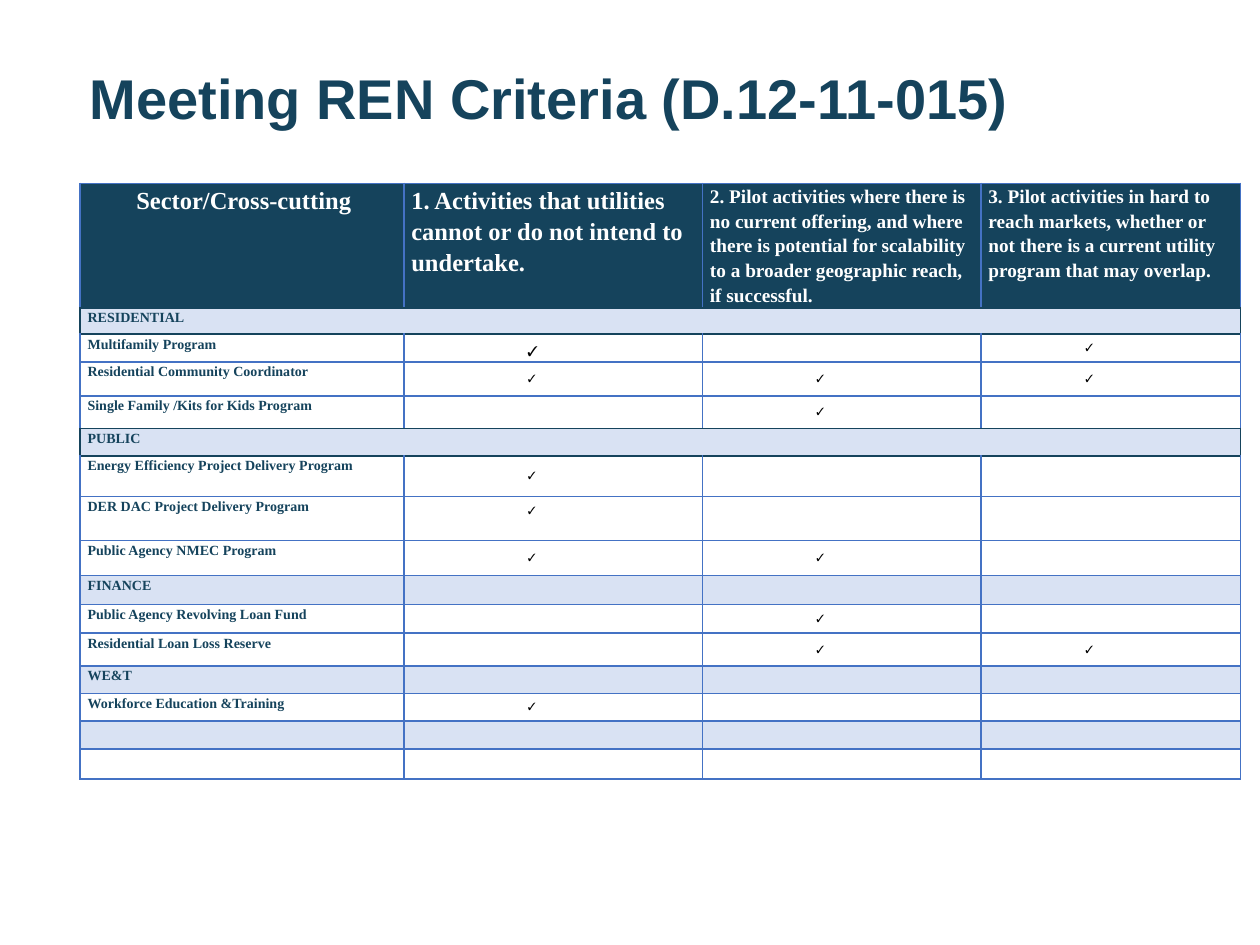
from dataclasses import dataclass

from lxml.etree import SubElement
from pptx import Presentation
from pptx.dml.color import RGBColor
from pptx.enum.text import MSO_ANCHOR, MSO_AUTO_SIZE, PP_ALIGN
from pptx.oxml.ns import qn
from pptx.util import Inches, Pt


@dataclass(frozen=True)
class Theme:
    navy: str = "15435C"
    blue: str = "4472C4"
    pale: str = "D9E2F3"
    white: str = "FFFFFF"
    black: str = "000000"
    title_font: str = "Arial"
    table_font: str = "Times New Roman"
    title_size: int = 32
    large_header: int = 14
    small_header: int = 11
    label_size: int = 8
    spacer_size: int = 9
    check_size: int = 6
    large_check: int = 8


THEME = Theme()
CHECK = "✓"
HARD_SPACE = " "
NO_STYLE = "{2D5ABB26-0587-4C30-8999-92F81FD0307C}"
COLUMN_WIDTHS = [2.57, 2.37, 2.21, 2.06]
HEADER_HEIGHT = 0.99
HEADERS = [
    ("Sector/Cross-cutting", THEME.large_header),
    ("1. Activities that utilities cannot or do not intend to undertake.", THEME.large_header),
    ("2. Pilot activities where there is no current offering, and where there is potential "
     "for scalability to a broader geographic reach, if successful.", THEME.small_header),
    ("3. Pilot activities in hard to reach markets, whether or not there is a current "
     "utility program that may overlap.", THEME.small_header),
]
# Row kind, height, label, criteria met
ROWS = [
    ("band", 0.21, "RESIDENTIAL", ()),
    ("program", 0.22, "Multifamily Program", (1, 3)),
    ("program", 0.27, "Residential Community Coordinator", (1, 2, 3)),
    ("program", 0.26, "Single Family /Kits for Kids Program", (2,)),
    ("band", 0.22, "PUBLIC", ()),
    ("program", 0.32, "Energy Efficiency Project Delivery Program", (1,)),
    ("program", 0.35, "DER DAC Project Delivery Program", (1,)),
    ("program", 0.28, "Public Agency NMEC Program", (1, 2)),
    ("section", 0.23, "FINANCE", ()),
    ("program", 0.23, "Public Agency Revolving Loan Fund", (2,)),
    ("program", 0.26, "Residential Loan Loss Reserve", (2, 3)),
    ("section", 0.22, "WE&T", ()),
    ("program", 0.22, "Workforce Education &Training", (1,)),
    ("section", 0.22, "", ()),
    ("program", 0.24, "", ()),
]
KINDS = ["header"] + [row[0] for row in ROWS]


def apply(target, formats):
    for name, value in formats.items():
        setattr(target, name, value)


def write(para, text, font, size, color, bold=True):
    span = para.add_run()
    span.text = text
    apply(span.font, {"name": font, "size": Pt(size), "bold": bold})
    span.font.color.rgb = RGBColor.from_string(color)


def edge_colors(row, column):
    """Navy around full-width bands, blue elsewhere; bands have no inner verticals."""
    kind = KINDS[row]
    above = KINDS[row - 1] if row else ""
    below = KINDS[row + 1] if row + 1 < len(KINDS) else ""
    band = kind == "band"
    last = len(COLUMN_WIDTHS) - 1
    side = THEME.navy if band else THEME.blue
    return {
        "lnL": None if band and column > 0 else side,
        "lnR": None if band and column < last else side,
        "lnT": THEME.navy if "band" in (kind, above) else THEME.blue,
        "lnB": THEME.navy if "band" in (kind, below) else THEME.blue,
    }


def style_cell(cell, fill, edges):
    properties = cell._tc.get_or_add_tcPr()
    for tag, color in edges.items():
        line = SubElement(properties, qn(f"a:{tag}"), w=str(Pt(1) if color else 0))
        if color:
            SubElement(SubElement(line, qn("a:solidFill")), qn("a:srgbClr"), val=color)
        else:
            SubElement(line, qn("a:noFill"))
    cell.fill.solid()
    cell.fill.fore_color.rgb = RGBColor.from_string(fill)
    apply(cell, {"margin_left": Inches(0.06), "margin_right": Inches(0.06),
                 "margin_top": 0, "margin_bottom": 0})


def fill_text(cell, text, size, color):
    para = cell.text_frame.paragraphs[0]
    if text:
        para.line_spacing = 1.15
        write(para, text, THEME.table_font, size, color)
    else:
        # A small end mark keeps empty rows from growing
        SubElement(para._p, qn("a:endParaRPr"), sz=str(size * 100))


def fill_check(cell, size):
    """A check is a bullet on an otherwise blank, centred line."""
    apply(cell, {"vertical_anchor": MSO_ANCHOR.MIDDLE, "margin_right": Inches(0.19)})
    para = cell.text_frame.paragraphs[0]
    para.alignment = PP_ALIGN.CENTER
    properties = para._p.get_or_add_pPr()
    properties.set("marL", str(Inches(0.25)))
    properties.set("indent", str(-Inches(0.25)))
    SubElement(properties, qn("a:buFont"), typeface=THEME.table_font)
    SubElement(properties, qn("a:buChar"), char=CHECK)
    write(para, HARD_SPACE, THEME.table_font, size, THEME.black, bold=False)


def place_title(page, left, top, width, height):
    box = page.shapes.title
    apply(box, {"left": left, "top": top, "width": width, "height": height})
    frame = box.text_frame
    inset = Inches(0.07)
    apply(frame, {"margin_left": inset, "margin_right": inset, "margin_top": inset,
                  "margin_bottom": inset, "word_wrap": True,
                  "auto_size": MSO_AUTO_SIZE.NONE, "vertical_anchor": MSO_ANCHOR.MIDDLE})
    para = frame.paragraphs[0]
    apply(para, {"alignment": PP_ALIGN.LEFT, "line_spacing": 0.9})
    write(para, "Meeting REN Criteria (D.12-11-015)", THEME.title_font,
          THEME.title_size, THEME.navy)


def place_criteria_table(page, left, top, width, height):
    frame = page.shapes.add_table(len(KINDS), len(COLUMN_WIDTHS), left, top, width, height)
    table = frame.table
    apply(table, {"first_row": False, "horz_banding": False})
    table._tbl.tblPr.find(qn("a:tableStyleId")).text = NO_STYLE
    for column, share in zip(table.columns, COLUMN_WIDTHS):
        column.width = int(width * share / sum(COLUMN_WIDTHS))
    heights = [HEADER_HEIGHT] + [row[1] for row in ROWS]
    for row, share in zip(table.rows, heights):
        row.height = int(height * share / sum(heights))

    # Header row
    for column, (text, size) in enumerate(HEADERS):
        cell = table.cell(0, column)
        style_cell(cell, THEME.navy, edge_colors(0, column))
        para = cell.text_frame.paragraphs[0]
        para.alignment = PP_ALIGN.LEFT if column else PP_ALIGN.CENTER
        if column == 0:
            write(para, HARD_SPACE, THEME.table_font, THEME.spacer_size, THEME.white)
        fill_text(cell, text, size, THEME.white)

    # Sectors and programs
    for row, (kind, _, label, criteria) in enumerate(ROWS, start=1):
        fill = THEME.white if kind == "program" else THEME.pale
        for column in range(len(COLUMN_WIDTHS)):
            cell = table.cell(row, column)
            style_cell(cell, fill, edge_colors(row, column))
            if column in criteria:
                first = (row, column) == (2, 1)
                fill_check(cell, THEME.large_check if first else THEME.check_size)
            else:
                fill_text(cell, "" if column else label, THEME.label_size, THEME.navy)

    # The first check sits below the middle, the one in the tallest row above it
    table.cell(2, 1).margin_top = Inches(0.06)
    table.cell(7, 1).margin_bottom = Inches(0.11)


def main():
    deck = Presentation()
    apply(deck, {"slide_width": Inches(10), "slide_height": Inches(7.5)})
    page = deck.slides.add_slide(deck.slide_layouts[5])
    place_title(page, Inches(0.64), Inches(0.46), Inches(7.57), Inches(0.69))
    place_criteria_table(page, Inches(0.635), Inches(1.455), Inches(9.21), Inches(4.73))
    deck.save("out.pptx")


if __name__ == "__main__":
    main()
